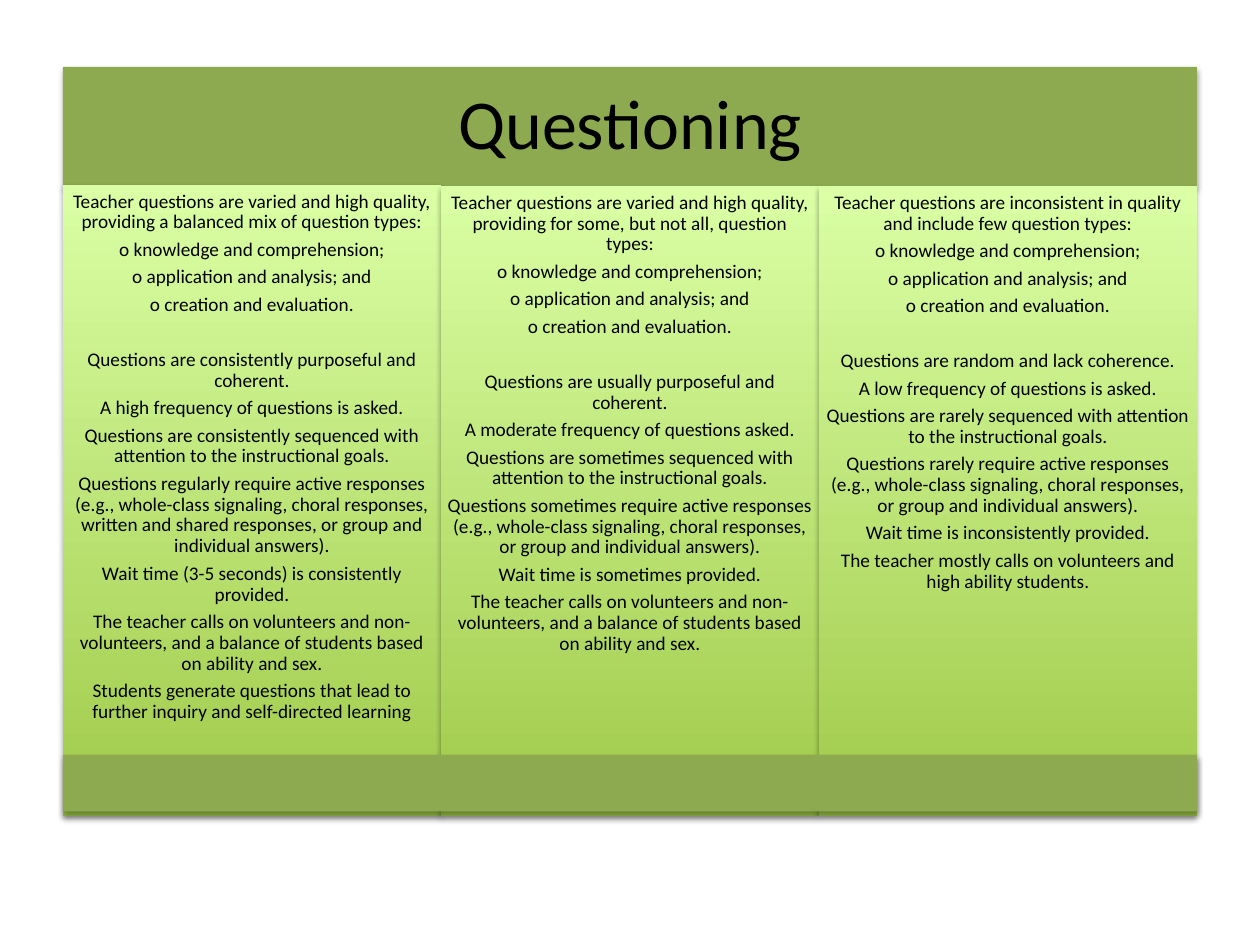
import pptx
import pptx.util
from lxml import etree
from pptx.dml.color import RGBColor
from pptx.enum.shapes import MSO_SHAPE
from pptx.enum.text import MSO_ANCHOR, PP_ALIGN
from pptx.oxml.ns import qn

OLIVE = RGBColor(0x8D, 0xAA, 0x51)
GREEN = RGBColor(0xA0, 0xCA, 0x4A)
PALE_GREEN = RGBColor(0xDA, 0xFF, 0xA5)
BLACK = RGBColor(0, 0, 0)

FONT = "Calibri"
LEFT, COLUMN_WIDTH = 0.5, 3
BAND_WIDTH = 3 * COLUMN_WIDTH
COLUMN_BOTTOM = 6.48
LINE_SPACING = 0.9
SPACE_SHARE = 0.35  # space after a paragraph, as a share of its text size
BODY_SIZE = 11
GROUP_GAP = 19.6  # space between the question types and the other statements

QUESTION_TYPES = [
    "o knowledge and comprehension;",
    "o application and analysis; and",
    "o creation and evaluation.",
]
# Each column: top, introduction, statements
COLUMNS = [
    (1.47,
     "Teacher questions are varied and high quality, providing a balanced mix of question types:",
     ["Questions are consistently purposeful and coherent.",
      "A high frequency of questions is asked.",
      "Questions are consistently sequenced with attention to the instructional goals.",
      "Questions regularly require active responses (e.g., whole-class signaling, choral "
      "responses, written and shared responses, or group and individual answers).",
      "Wait time (3-5 seconds) is consistently provided.",
      "The teacher calls on volunteers and non-volunteers, and a balance of students based "
      "on ability and sex.",
      "Students generate questions that lead to further inquiry and self-directed learning"]),
    (1.48,
     "Teacher questions are varied and high quality, providing for some, but not all, "
     "question types:",
     ["Questions are usually purposeful and coherent.",
      "A moderate frequency of questions asked.",
      "Questions are sometimes sequenced with attention to the instructional goals.",
      "Questions sometimes require active responses (e.g., whole-class signaling, choral "
      "responses, or group and individual answers).",
      "Wait time is sometimes provided.",
      "The teacher calls on volunteers and non-volunteers, and a balance of students based "
      "on ability and sex."]),
    (1.48,
     "Teacher questions are inconsistent in quality and include few question types:",
     ["Questions are random and lack coherence.",
      "A low frequency of questions is asked.",
      "Questions are rarely sequenced with attention to the instructional goals.",
      "Questions rarely require active responses (e.g., whole-class signaling, choral "
      "responses, or group and individual answers).",
      "Wait time is inconsistently provided.",
      "The teacher mostly calls on volunteers and high ability students."]),
]


def add_shadow(shape):
    """Give the shape a soft black shadow straight below it."""
    shape.shadow.inherit = False
    effects = shape._element.spPr.find(qn("a:effectLst"))
    shadow = etree.SubElement(
        effects, qn("a:outerShdw"), blurRad=str(pptx.util.Pt(3.1)),
        dist=str(pptx.util.Pt(1.8)), dir="5400000", rotWithShape="0")
    color = etree.SubElement(shadow, qn("a:srgbClr"), val=str(BLACK))
    etree.SubElement(color, qn("a:alpha"), val="35000")


def add_panel(slide, left, top, width, height):
    shape = slide.shapes.add_shape(
        MSO_SHAPE.RECTANGLE, *(pptx.util.Inches(length) for length in (left, top, width, height)))
    shape.line.fill.background()
    add_shadow(shape)
    return shape


def add_band(slide, top, height):
    band = add_panel(slide, LEFT, top, BAND_WIDTH, height)
    band.fill.solid()
    band.fill.fore_color.rgb = OLIVE
    return band


def prepare_text(shape, inset, anchor):
    frame = shape.text_frame
    frame.word_wrap = True
    frame.vertical_anchor = anchor
    frame.margin_left = frame.margin_right = pptx.util.Inches(inset)
    frame.margin_top = frame.margin_bottom = pptx.util.Inches(inset)
    return frame


def write_paragraph(paragraph, text, size, space_after=None):
    paragraph.alignment = PP_ALIGN.CENTER
    paragraph.line_spacing = LINE_SPACING
    paragraph.space_after = pptx.util.Pt(space_after or SPACE_SHARE * size)
    run = paragraph.add_run()
    run.text = text
    run.font.name = FONT
    run.font.size = pptx.util.Pt(size)
    run.font.color.rgb = BLACK


def add_column(slide, index, top, introduction, statements):
    column = add_panel(slide, LEFT + index * COLUMN_WIDTH, top, COLUMN_WIDTH, COLUMN_BOTTOM - top)
    column.fill.gradient()
    column.fill.gradient_angle = 90
    for stop, color in zip(column.fill.gradient_stops, (GREEN, PALE_GREEN)):
        stop.color.rgb = color
    for stop, position in zip(column.fill.gradient_stops, (0, 1)):
        stop.position = position

    frame = prepare_text(column, 0.05, MSO_ANCHOR.TOP)
    write_paragraph(frame.paragraphs[0], introduction, BODY_SIZE)
    for text in QUESTION_TYPES + statements:
        gap = GROUP_GAP if text == QUESTION_TYPES[-1] else None
        write_paragraph(frame.add_paragraph(), text, BODY_SIZE, gap)


def main():
    presentation = pptx.Presentation()
    presentation.slide_width = pptx.util.Inches(10)
    presentation.slide_height = pptx.util.Inches(7.5)
    slide = presentation.slides.add_slide(presentation.slide_layouts[6])

    header = add_band(slide, 0.53, 0.95)
    title = prepare_text(header, 0.17, MSO_ANCHOR.MIDDLE)
    write_paragraph(title.paragraphs[0], "Questioning", 40)
    for index, column in enumerate(COLUMNS):
        add_column(slide, index, *column)
    add_band(slide, 5.99, 0.45)

    presentation.save("out.pptx")


if __name__ == "__main__":
    main()
